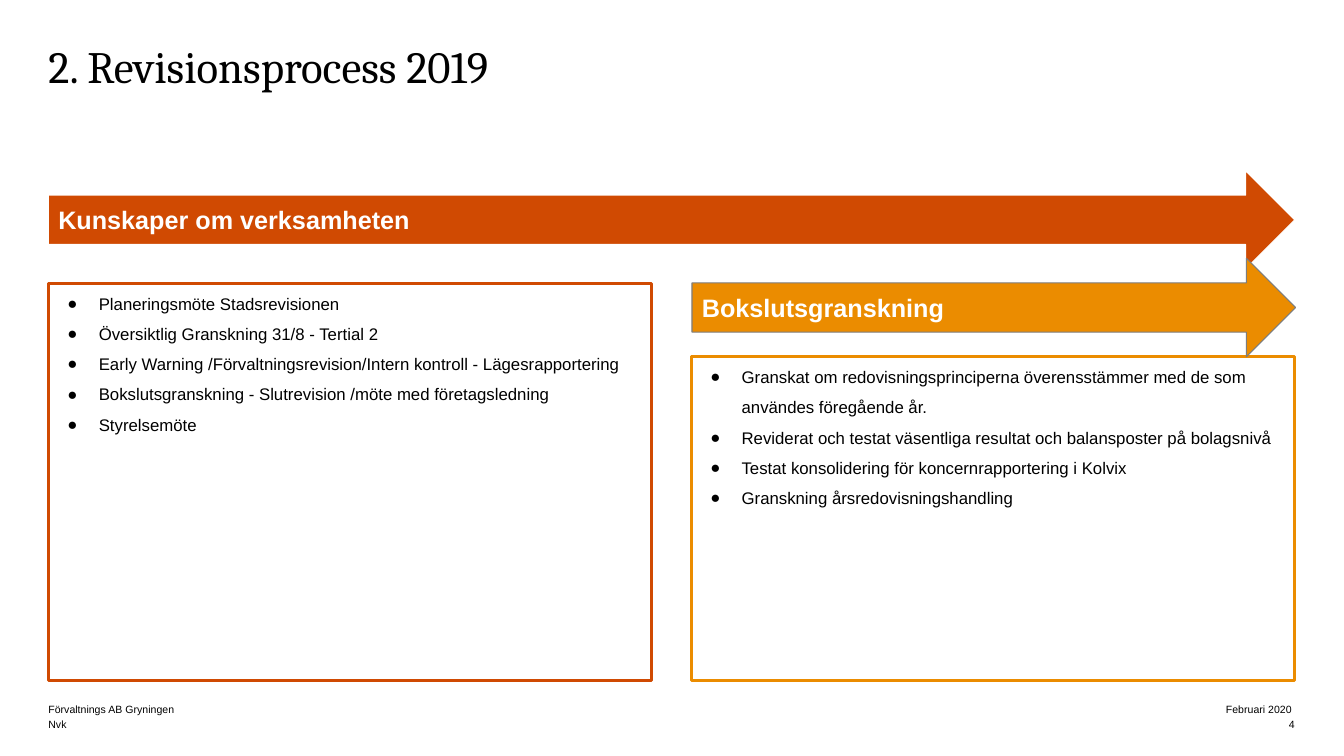
from lxml.etree import SubElement
from pptx import Presentation
from pptx.dml.color import RGBColor
from pptx.enum.shapes import MSO_SHAPE
from pptx.enum.text import MSO_ANCHOR, MSO_AUTO_SIZE, PP_ALIGN
from pptx.oxml.ns import qn
from pptx.util import Cm, Pt

COLORS = {"orange": "D04A02", "amber": "EB8C00", "grey": "7D7D7D",
          "black": "000000", "white": "FFFFFF"}

TITLE = "2. Revisionsprocess 2019"
KNOWLEDGE_STEPS = [
    "Planeringsmöte Stadsrevisionen",
    "Översiktlig Granskning 31/8 - Tertial 2",
    "Early Warning /Förvaltningsrevision/Intern kontroll - Lägesrapportering",
    "Bokslutsgranskning - Slutrevision /möte med företagsledning",
    "Styrelsemöte",
]
CLOSING_STEPS = [
    "Granskat om redovisningsprinciperna överensstämmer med de som användes föregående år.",
    "Reviderat och testat väsentliga resultat och balansposter på bolagsnivå",
    "Testat konsolidering för koncernrapportering i Kolvix",
    "Granskning årsredovisningshandling",
]
FOOTER_ROWS = [("Förvaltnings AB Gryningen", "Februari 2020 "), ("Nvk", "4")]

# Page grid, in centimetres
LEFT, COLUMN, GAP = 1.22, 15.21, 0.99
FULL = 2 * COLUMN + GAP
RIGHT = LEFT + COLUMN + GAP
BOX_BOTTOM = 17.14
ARROW_HEIGHT = 2.48
FOOTER_TOP, FOOTER_LINE, FOOTER_RIGHT_WIDTH = 17.65, 0.38, 9.8


def color(name):
    return RGBColor.from_string(COLORS[name])


def place(shape, left, top, width, height):
    shape.left, shape.top = Cm(left), Cm(top)
    shape.width, shape.height = Cm(width), Cm(height)


def add_bullet(paragraph):
    properties = paragraph._p.get_or_add_pPr()
    properties.set("marL", str(Cm(1.27)))
    properties.set("indent", str(-Cm(0.79)))
    bullet_color = SubElement(properties, qn("a:buClr"))
    SubElement(bullet_color, qn("a:srgbClr"), val=COLORS["black"])
    SubElement(properties, qn("a:buFont"), typeface="Arial")
    SubElement(properties, qn("a:buChar"), char="●")


def write(shape, lines, size=12, font="Arial", ink="black", bold=False, inset=0,
          anchor=MSO_ANCHOR.TOP, align=PP_ALIGN.LEFT, spacing=1.0, before=0,
          bullets=False):
    """Fill a shape with one paragraph per line; before applies to the first."""
    frame = shape.text_frame
    frame.word_wrap = True
    frame.auto_size = MSO_AUTO_SIZE.NONE
    frame.vertical_anchor = anchor
    frame.margin_left = frame.margin_right = Cm(inset)
    frame.margin_top = frame.margin_bottom = Cm(inset)
    for number, line in enumerate(lines):
        paragraph = frame.add_paragraph() if number else frame.paragraphs[0]
        paragraph.alignment = align
        paragraph.line_spacing = spacing
        paragraph.space_before = Pt(0 if number else before)
        if bullets:
            add_bullet(paragraph)
        run = paragraph.add_run()
        run.text = line
        run.font.size, run.font.name, run.font.bold = Pt(size), font, bold
        run.font.color.rgb = color(ink)


def outline(shape, name, width):
    shape.line.color.rgb = color(name)
    shape.line.width = Pt(width)


def add_arrow(slide, label, left, top, width, fill, edge):
    arrow = slide.shapes.add_shape(MSO_SHAPE.RIGHT_ARROW, Cm(left), Cm(top),
                                   Cm(width), Cm(ARROW_HEIGHT))
    arrow.shadow.inherit = False
    arrow.fill.solid()
    arrow.fill.fore_color.rgb = color(fill)
    outline(arrow, edge, 0.75)
    write(arrow, [label], size=18, ink="white", bold=True, inset=0.25,
          anchor=MSO_ANCHOR.MIDDLE)


def add_footer(slide, words, left, top, width, align):
    footer = slide.shapes.add_textbox(Cm(left), Cm(top), Cm(width), Cm(FOOTER_LINE))
    write(footer, [words], size=7.5, anchor=MSO_ANCHOR.BOTTOM, align=align)


def main():
    deck = Presentation()
    deck.slide_width, deck.slide_height = Cm(33.87), Cm(19.05)
    slide = deck.slides.add_slide(deck.slide_layouts[3])
    title, knowledge, closing = slide.placeholders

    place(title, LEFT, 1.19, FULL, 1.6)
    write(title, [TITLE], size=32, font="Cambria", spacing=0.85)

    for box, steps, left, top, edge in [
        (knowledge, KNOWLEDGE_STEPS, LEFT, 7.14, "orange"),
        (closing, CLOSING_STEPS, RIGHT, 8.99, "amber"),
    ]:
        place(box, left, top, COLUMN, BOX_BOTTOM - top)
        outline(box, edge, 2.25)
        write(box, steps, spacing=1.5, before=3, bullets=True)

    add_arrow(slide, "Kunskaper om verksamheten", LEFT, 4.3, FULL, "orange", "white")
    add_arrow(slide, "Bokslutsgranskning", RIGHT + 0.02, 6.51, COLUMN, "amber", "grey")

    for row, (left_words, right_words) in enumerate(FOOTER_ROWS):
        top = FOOTER_TOP + row * FOOTER_LINE
        add_footer(slide, left_words, LEFT, top, COLUMN, PP_ALIGN.LEFT)
        add_footer(slide, right_words, LEFT + FULL - FOOTER_RIGHT_WIDTH, top,
                   FOOTER_RIGHT_WIDTH, PP_ALIGN.RIGHT)

    deck.save("out.pptx")


if __name__ == "__main__":
    main()
